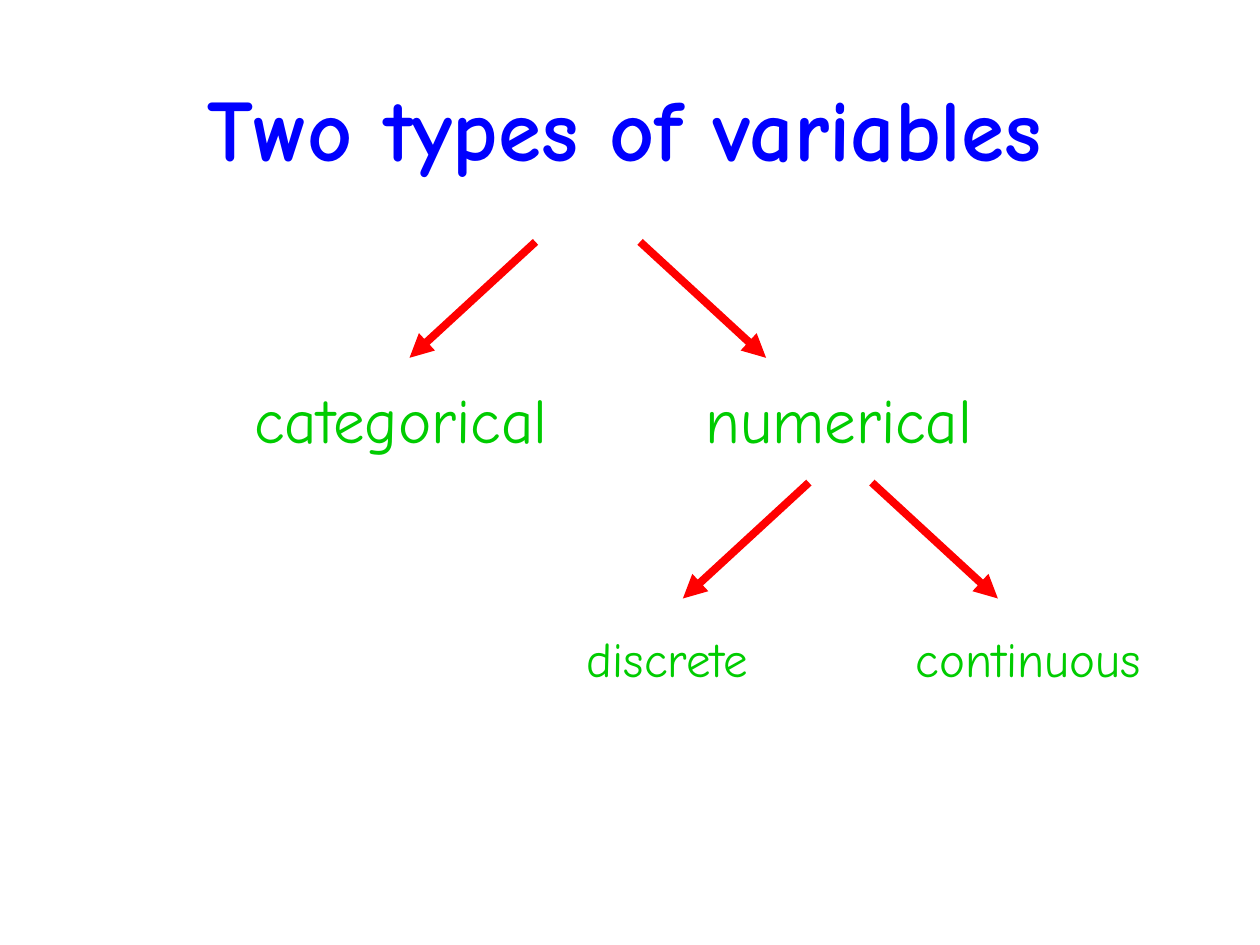
from dataclasses import dataclass

import lxml.etree
import pptx
import pptx.dml.color
import pptx.enum.shapes
import pptx.enum.text
import pptx.oxml.ns
import pptx.slide
import pptx.text.text
import pptx.util

Inches = pptx.util.Inches
FONT = "Comic Neue"
BLUE = "0000FF"
RED = "FF0000"
GREEN = "00CC00"
ARROW_RUN = 1.0
ARROW_DROP = 0.92


@dataclass
class Label:
    text: str
    left: float
    top: float
    width: float
    height: float
    size: int


@dataclass
class Branch:
    left_start: float
    right_start: float
    top: float


LABELS = [
    Label("categorical", 1.92, 3.04, 3.42, 0.64, 36),
    Label("numerical", 5.5, 3.04, 3.42, 0.64, 36),
    Label("discrete", 4.56, 4.99, 2.08, 0.52, 28),
    Label("continuous", 7.17, 4.99, 2.25, 0.52, 28),
]
BRANCHES = [Branch(4.25, 5.08, 1.92), Branch(6.42, 6.92, 3.83)]


def color(value: str) -> pptx.dml.color.RGBColor:
    return pptx.dml.color.RGBColor.from_string(value)


def format_text(
    frame: pptx.text.text.TextFrame, size: int, shade: str, bold: bool
) -> None:
    font = frame.paragraphs[0].runs[0].font
    font.name = FONT
    font.size = pptx.util.Pt(size)
    font.bold = bold
    font.color.rgb = color(shade)


def draw_title(page: pptx.slide.Slide) -> None:
    title = page.shapes.title
    title.left, title.top = Inches(0.67), Inches(0.42)
    title.width, title.height = Inches(8.58), Inches(1.17)
    frame = title.text_frame
    frame.text = "Two types of variables"
    frame.auto_size = pptx.enum.text.MSO_AUTO_SIZE.NONE
    frame.vertical_anchor = pptx.enum.text.MSO_ANCHOR.MIDDLE
    frame.paragraphs[0].alignment = pptx.enum.text.PP_ALIGN.CENTER
    format_text(frame, 50, BLUE, True)


def draw_label(page: pptx.slide.Slide, label: Label) -> None:
    box = page.shapes.add_textbox(
        Inches(label.left), Inches(label.top), Inches(label.width), Inches(label.height)
    )
    frame = box.text_frame
    frame.word_wrap = True
    frame.auto_size = pptx.enum.text.MSO_AUTO_SIZE.SHAPE_TO_FIT_TEXT
    frame.text = label.text
    frame.paragraphs[0].line_spacing = 0.9
    format_text(frame, label.size, GREEN, False)


def draw_arrow(page: pptx.slide.Slide, start: float, end: float, top: float) -> None:
    arrow = page.shapes.add_connector(
        pptx.enum.shapes.MSO_CONNECTOR.STRAIGHT,
        Inches(start), Inches(top), Inches(end), Inches(top + ARROW_DROP),
    )
    arrow.line.color.rgb = color(RED)
    arrow.line.width = pptx.util.Pt(4.5)
    qn = pptx.oxml.ns.qn
    line = arrow.line._get_or_add_ln()
    lxml.etree.SubElement(line, qn("a:tailEnd"), type="triangle")
    lxml.etree.SubElement(arrow._element.spPr, qn("a:effectLst"))


def draw_branch(page: pptx.slide.Slide, branch: Branch) -> None:
    draw_arrow(page, branch.left_start, branch.left_start - ARROW_RUN, branch.top)
    draw_arrow(page, branch.right_start, branch.right_start + ARROW_RUN, branch.top)


def main() -> None:
    deck = pptx.Presentation()
    deck.slide_width, deck.slide_height = Inches(10), Inches(7.5)
    page = deck.slides.add_slide(deck.slide_layouts[0])
    subtitle = page.placeholders[1].element
    subtitle.getparent().remove(subtitle)
    draw_title(page)
    for branch in BRANCHES:
        draw_branch(page, branch)
    for label in LABELS:
        draw_label(page, label)
    deck.save("out.pptx")


if __name__ == "__main__":
    main()
